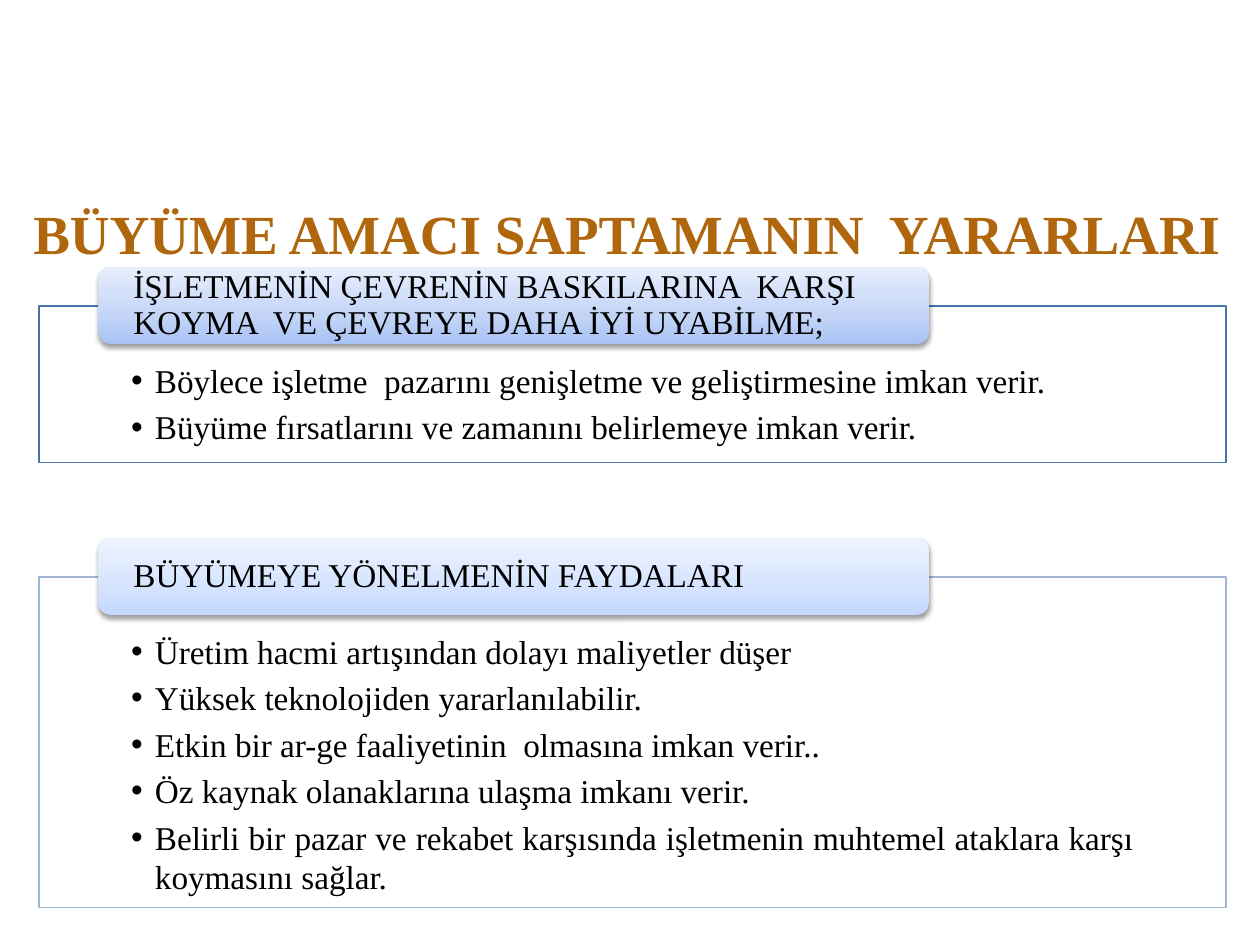
from copy import deepcopy

from lxml.etree import SubElement as Sub
from pptx import Presentation
from pptx.dml.color import RGBColor as RGB
from pptx.enum.shapes import MSO_SHAPE as Kind
from pptx.enum.text import MSO_ANCHOR as Anchor, PP_ALIGN as Align
from pptx.oxml.ns import qn
from pptx.util import Inches, Pt

BROWN = RGB(0xB0, 0x66, 0x0C)
BLACK = RGB(0, 0, 0)
WHITE = RGB(0xFF, 0xFF, 0xFF)
BLUE = RGB(0x48, 0x75, 0xAC)
PALE = RGB(0xA2, 0xB4, 0xD4)
DEEP = [RGB(0xA8, 0xC2, 0xF4), RGB(0xC2, 0xD4, 0xF6), RGB(0xE7, 0xEE, 0xFD)]
LIGHT = [RGB(0xC3, 0xD8, 0xFE), RGB(0xD4, 0xE3, 0xFE), RGB(0xEE, 0xF4, 0xFF)]
STOPS = [0, 0.35, 1]

FONT = {"name": "Times New Roman", "size": Pt(19), "bold": False}
HEAD = {"name": "Times New Roman", "size": Pt(31.5), "bold": True}
BODY = {"margin_left": Inches(0.73), "margin_right": Inches(0.73),
        "margin_top": Inches(0.43), "margin_bottom": Inches(0.15),
        "vertical_anchor": Anchor.TOP, "word_wrap": True}
TAB = {"margin_left": Inches(0.25), "margin_right": Inches(0.25),
       "margin_top": 0, "margin_bottom": 0,
       "vertical_anchor": Anchor.MIDDLE, "word_wrap": True}

PARTS = [
    ((0.31, 2.43, 9.42, 1.24), BLUE, DEEP, Align.LEFT,
     "İŞLETMENİN ÇEVRENİN BASKILARINA  KARŞI KOYMA  VE ÇEVREYE DAHA İYİ UYABİLME;",
     ["Böylece işletme  pazarını genişletme ve geliştirmesine imkan verir.",
      "Büyüme fırsatlarını ve zamanını belirlemeye imkan verir."]),
    ((0.31, 4.58, 9.42, 2.62), PALE, LIGHT, Align.JUSTIFY,
     "BÜYÜMEYE YÖNELMENİN FAYDALARI",
     ["Üretim hacmi artışından dolayı maliyetler düşer",
      "Yüksek teknolojiden yararlanılabilir.",
      "Etkin bir ar-ge faaliyetinin  olmasına imkan verir..",
      "Öz kaynak olanaklarına ulaşma imkanı verir.",
      "Belirli bir pazar ve rekabet karşısında işletmenin muhtemel ataklara "
      "karşı koymasını sağlar."]),
]


def style(item, form):
    """Set each attribute named in the format dict."""
    for key, value in form.items():
        setattr(item, key, value)


def write(para, text, form, color):
    """Fill a paragraph with one formatted run."""
    run = para.add_run()
    run.text = text
    style(run.font, form)
    run.font.color.rgb = color


def bullet(para):
    """Give a paragraph a hanging round bullet."""
    props = para._p.get_or_add_pPr()
    props.set("marL", str(Inches(0.19)))
    props.set("indent", str(-Inches(0.19)))
    Sub(props, qn("a:buFont"), typeface="Arial")
    Sub(props, qn("a:buChar"), char="•")


def shade(shape, colors):
    """Fill a shape with a three-stop gradient that rises from its base."""
    fill = shape.fill
    fill.gradient()
    fill.gradient_angle = 90
    stops = shape._element.spPr.find(".//" + qn("a:gsLst"))
    stops.append(deepcopy(stops[-1]))
    for stop, color, pos in zip(fill.gradient_stops, colors, STOPS):
        stop.color.rgb = color
        stop.position = pos


def drop(shape):
    """Cast a soft shadow straight down."""
    effect = shape._element.spPr.find(qn("a:effectLst"))
    cast = Sub(effect, qn("a:outerShdw"), blurRad=str(Pt(3.1)),
               dist=str(Pt(1.6)), dir="5400000", rotWithShape="0")
    tone = Sub(cast, qn("a:srgbClr"), val=str(BLACK))
    Sub(tone, qn("a:alpha"), val="38000")


def add_title(slide, box):
    """Place the slide title in the box."""
    title = slide.shapes.title
    style(title, dict(zip(("left", "top", "width", "height"), map(Inches, box))))
    frame = title.text_frame
    style(frame, {"vertical_anchor": Anchor.BOTTOM, "word_wrap": True})
    para = frame.paragraphs[0]
    para.alignment = Align.CENTER
    write(para, "BÜYÜME AMACI SAPTAMANIN  YARARLARI", HEAD, BROWN)


def add_list(slide, box, edge, align, items):
    """Draw the framed bullet list."""
    shape = slide.shapes.add_shape(Kind.RECTANGLE, *map(Inches, box))
    shape.shadow.inherit = False
    shape.fill.solid()
    shape.fill.fore_color.rgb = WHITE
    tone = shape._element.spPr.find(".//" + qn("a:srgbClr"))
    Sub(tone, qn("a:alpha"), val="90000")
    shape.line.color.rgb = edge
    shape.line.width = Pt(0.75)
    frame = shape.text_frame
    style(frame, BODY)
    for num, text in enumerate(items):
        para = frame.add_paragraph() if num else frame.paragraphs[0]
        bullet(para)
        style(para, {"alignment": align, "level": 1, "space_after": Pt(3.7)})
        write(para, text, FONT, BLACK)


def add_tab(slide, box, colors, text):
    """Draw the rounded heading over the top edge of a list."""
    shape = slide.shapes.add_shape(Kind.ROUNDED_RECTANGLE, *map(Inches, box))
    shape.shadow.inherit = False
    shade(shape, colors)
    shape.line.fill.background()
    drop(shape)
    frame = shape.text_frame
    style(frame, TAB)
    para = frame.paragraphs[0]
    style(para, {"alignment": Align.LEFT, "line_spacing": 0.9})
    write(para, text, FONT, BLACK)


def add_part(slide, box, edge, colors, align, head, items):
    """Place a list and its heading relative to the box."""
    left, top, width, _ = box
    add_list(slide, box, edge, align, items)
    add_tab(slide, (left + 0.47, top - 0.31, width * 0.7, 0.61), colors, head)


def main():
    """Build and save the slide."""
    deck = Presentation()
    deck.slide_width, deck.slide_height = Inches(10), Inches(7.5)
    slide = deck.slides.add_slide(deck.slide_layouts[5])
    add_title(slide, (-0.2, 0.91, 10.35, 1.25))
    for part in PARTS:
        add_part(slide, *part)
    deck.save("out.pptx")


if __name__ == "__main__":
    main()
